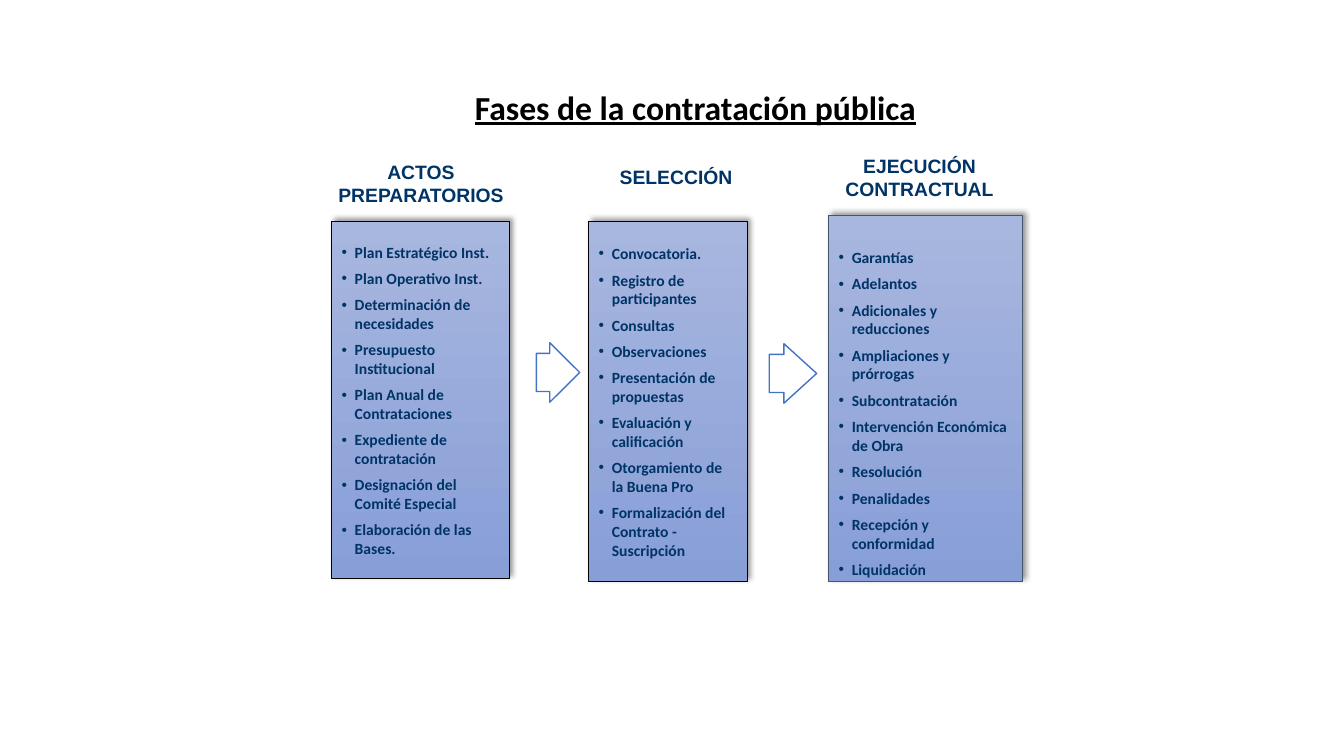
from lxml import etree
from pptx import Presentation
from pptx.dml.color import RGBColor
from pptx.enum.shapes import MSO_SHAPE
from pptx.enum.text import MSO_ANCHOR, MSO_AUTO_SIZE, PP_ALIGN
from pptx.oxml.ns import qn
from pptx.util import Inches, Pt

RECTANGLE, RIGHT_ARROW = MSO_SHAPE.RECTANGLE, MSO_SHAPE.RIGHT_ARROW
TOP, MIDDLE = MSO_ANCHOR.TOP, MSO_ANCHOR.MIDDLE
LEFT, CENTER = PP_ALIGN.LEFT, PP_ALIGN.CENTER
NO_AUTOFIT = MSO_AUTO_SIZE.NONE

BLACK = RGBColor(0x00, 0x00, 0x00)
WHITE = RGBColor(0xFF, 0xFF, 0xFF)
NAVY = RGBColor(0x00, 0x33, 0x66)
SLATE = RGBColor(0x44, 0x54, 0x6A)
BLUE = RGBColor(0x44, 0x72, 0xC4)
PANEL_TOP = RGBColor(0xA8, 0xB7, 0xDF)
PANEL_BOTTOM = RGBColor(0x88, 0x9E, 0xD7)

TITLE = "Fases de la contratación pública"
TITLE_AREA = (4.61, 0.81, 5.41, 0.53)
PHASES = [
    {
        "heading": "ACTOS PREPARATORIOS",
        "heading_area": (2.92, 1.55, 2.51, 0.53),
        "panel_area": (3.29, 2.2, 1.76, 3.54),
        "outline": BLACK,
        "margins": (0.05, 0.05),
        "steps": [
            "Plan Estratégico Inst.",
            "Plan Operativo Inst.",
            "Determinación de necesidades",
            "Presupuesto Institucional",
            "Plan Anual de Contrataciones",
            "Expediente de contratación",
            "Designación del Comité Especial",
            "Elaboración de las Bases.",
        ],
    },
    {
        "heading": "SELECCIÓN",
        "heading_area": (5.98, 1.49, 1.45, 0.53),
        "panel_area": (5.84, 2.2, 1.57, 3.57),
        "outline": BLACK,
        "margins": (0.05, 0.05),
        "steps": [
            "Convocatoria.",
            "Registro de participantes",
            "Consultas",
            "Observaciones",
            "Presentación de propuestas",
            "Evaluación y calificación",
            "Otorgamiento de la Buena Pro",
            "Formalización del Contrato - Suscripción",
        ],
    },
    {
        "heading": "EJECUCIÓN CONTRACTUAL",
        "heading_area": (8.22, 1.49, 1.8, 0.53),
        "panel_area": (8.22, 2.14, 1.92, 3.63),
        "outline": SLATE,
        "margins": (0.32, 0.03),
        "steps": [
            "Garantías",
            "Adelantos",
            "Adicionales y reducciones",
            "Ampliaciones y prórrogas",
            "Subcontratación",
            "Intervención Económica de Obra",
            "Resolución",
            "Penalidades",
            "Recepción y conformidad",
            "Liquidación",
        ],
    },
]
ARROW_AREAS = [(5.32, 3.4, 0.43, 0.59), (7.63, 3.41, 0.47, 0.59)]


def to_lengths(area):
    return [Inches(value) for value in area]


def style_font(para, name, size, color):
    for span in para.runs:
        span.font.name = name
        span.font.size = Pt(size)
        span.font.bold = True
        span.font.color.rgb = color


def add_bullet(para):
    properties = para._p.get_or_add_pPr()
    properties.set("marL", str(Inches(0.13)))
    properties.set("indent", str(Inches(-0.13)))
    etree.SubElement(properties, qn("a:buFont"), typeface="Arial")
    etree.SubElement(properties, qn("a:buChar"), char="•")


def add_shadow(shape):
    shape.shadow.inherit = False
    effects = shape._element.spPr.find(qn("a:effectLst"))
    shadow = etree.SubElement(
        effects, qn("a:outerShdw"), blurRad=str(Pt(4)), dist=str(Pt(3)),
        dir=str(315 * 60000), algn="bl", rotWithShape="0")
    color = etree.SubElement(shadow, qn("a:srgbClr"), val=str(BLACK))
    etree.SubElement(color, qn("a:alpha"), val="40000")


def add_panel(page, phase):
    panel = page.shapes.add_shape(RECTANGLE, *to_lengths(phase["panel_area"]))
    panel.fill.gradient()
    panel.fill.gradient_angle = 270
    for stop, color in zip(panel.fill.gradient_stops, (PANEL_TOP, PANEL_BOTTOM)):
        stop.color.rgb = color
    panel.line.color.rgb = phase["outline"]
    panel.line.width = Pt(0.5)
    add_shadow(panel)
    frame = panel.text_frame
    frame.word_wrap = True
    frame.vertical_anchor = MIDDLE
    frame.margin_top, frame.margin_bottom = to_lengths(phase["margins"])
    frame.text = "\n".join(phase["steps"])
    for index, para in enumerate(frame.paragraphs):
        add_bullet(para)
        para.alignment = LEFT
        para.space_before = Pt(5.5 if index else 0)
        style_font(para, "Calibri", 11.1, NAVY)


def add_heading(page, phase):
    box = page.shapes.add_textbox(*to_lengths(phase["heading_area"]))
    frame = box.text_frame
    frame.word_wrap = True
    frame.vertical_anchor = MIDDLE
    frame.text = phase["heading"]
    para = frame.paragraphs[0]
    para.alignment = CENTER
    style_font(para, "Arial", 13.8, NAVY)


def add_arrow(page, area):
    arrow = page.shapes.add_shape(RIGHT_ARROW, *to_lengths(area))
    arrow.adjustments[0] = 0.64
    arrow.adjustments[1] = 0.69
    arrow.shadow.inherit = False
    arrow.fill.solid()
    arrow.fill.fore_color.rgb = WHITE
    arrow.line.color.rgb = BLUE
    arrow.line.width = Pt(1)


def set_title(page):
    title = page.shapes.title
    title.left, title.top, title.width, title.height = to_lengths(TITLE_AREA)
    frame = title.text_frame
    frame.text = TITLE
    frame.word_wrap = True
    frame.auto_size = NO_AUTOFIT
    frame.vertical_anchor = TOP
    para = frame.paragraphs[0]
    para.alignment = LEFT
    style_font(para, "Calibri", 24, BLACK)
    para.runs[0].font.underline = True


def main():
    deck = Presentation()
    deck.slide_width, deck.slide_height = Inches(13.33), Inches(7.5)
    page = deck.slides.add_slide(deck.slide_layouts[5])
    set_title(page)
    for phase in PHASES:
        add_panel(page, phase)
        add_heading(page, phase)
    for area in ARROW_AREAS:
        add_arrow(page, area)
    deck.save("out.pptx")


if __name__ == "__main__":
    main()
